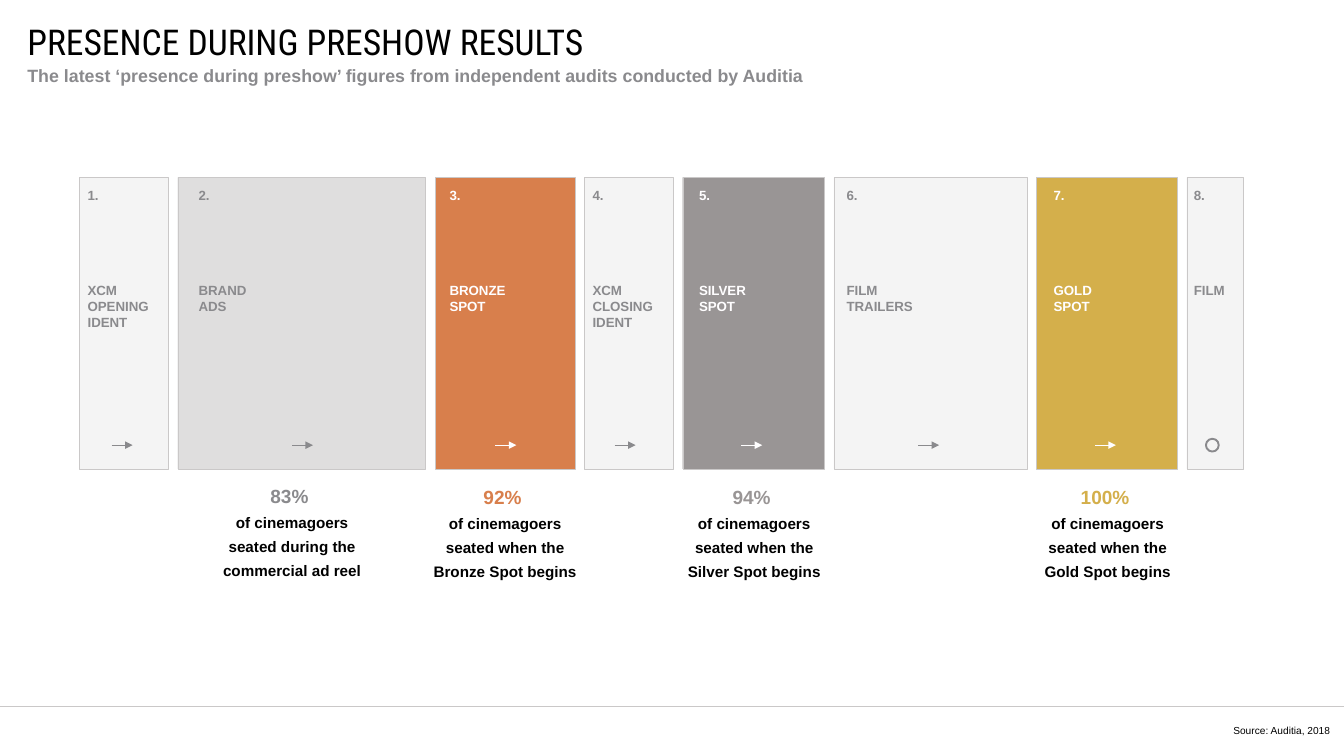
"""Build the preshow presence slide: eight timeline panels with audience figures."""
from dataclasses import dataclass

from lxml import etree
from pptx import Presentation
from pptx.dml.color import RGBColor
from pptx.enum.shapes import MSO_CONNECTOR, MSO_SHAPE
from pptx.enum.text import MSO_ANCHOR, PP_ALIGN
from pptx.oxml.ns import qn
from pptx.util import Inches, Pt

LEFT, CENTER, RIGHT = PP_ALIGN.LEFT, PP_ALIGN.CENTER, PP_ALIGN.RIGHT
TOP, MIDDLE = MSO_ANCHOR.TOP, MSO_ANCHOR.MIDDLE
RECT, OVAL = MSO_SHAPE.RECTANGLE, MSO_SHAPE.OVAL
STRAIGHT = MSO_CONNECTOR.STRAIGHT


@dataclass(frozen=True)
class Theme:
    black: str = "000000"
    white: str = "FFFEFF"
    grey: str = "8A8A8D"
    rule: str = "CAC8C8"
    pale: str = "F4F4F4"
    ads: str = "DFDEDE"
    bronze: str = "D87F4C"
    silver: str = "999595"
    gold: str = "D4AF4B"
    heading: str = "Roboto Condensed"
    body: str = "Arial"
    title_size: float = 28
    subtitle_size: float = 14
    figure_size: float = 15
    caption_size: float = 12
    label_size: float = 10.5
    source_size: float = 8


theme = Theme()
prs = Presentation()
prs.slide_width, prs.slide_height = Inches(14.7), Inches(8.27)
s = prs.slides.add_slide(prs.slide_layouts[6])


def add_text(box, lines, font=theme.body, align=LEFT, anchor=TOP, inset=0.0,
             wrap=True, spacing=None, gap=0):
    """Add a text box; each line is (text, size, colour, bold), gap follows the first."""
    sp = s.shapes.add_textbox(*map(Inches, box))
    tf = sp.text_frame
    tf.word_wrap, tf.vertical_anchor = wrap, anchor
    tf.margin_left = tf.margin_right = Inches(inset)
    tf.margin_top = tf.margin_bottom = Inches(inset / 2)
    for i, (text, size, color, bold) in enumerate(lines):
        p = tf.paragraphs[0] if i == 0 else tf.add_paragraph()
        p.alignment = align
        if spacing:
            p.line_spacing = Pt(spacing)
        if gap and i == 1:
            p.space_before = Pt(gap)
        r = p.add_run()
        r.text = text
        r.font.name, r.font.size, r.font.bold = font, Pt(size), bold
        r.font.color.rgb = RGBColor.from_string(color)


def add_line(x1, x2, y, color, width, arrow=False):
    """Add a horizontal line, with an arrowhead at its right end if asked."""
    line = s.shapes.add_connector(STRAIGHT, *map(Inches, (x1, y, x2, y)))
    line.line.color.rgb = RGBColor.from_string(color)
    line.line.width = Pt(width)
    if arrow:
        etree.SubElement(line.line._get_or_add_ln(), qn("a:tailEnd"), type="triangle")
    etree.SubElement(line._element.spPr, qn("a:effectLst"))


add_line(0, 14.7, 7.73, theme.rule, 0.5)
add_text((0.3, 0.3, 13.58, 0.31),
         [("PRESENCE DURING PRESHOW RESULTS", theme.title_size, theme.black, False)],
         font=theme.heading, anchor=MIDDLE, wrap=False)
add_text((0.3, 0.71, 13.17, 0.48),
         [("The latest ‘presence during preshow’ figures from independent audits "
           "conducted by Auditia", theme.subtitle_size, theme.grey, True)], spacing=16.8)
add_text((11.14, 7.93, 3.41, 0.13),
         [("Source: Auditia, 2018", theme.source_size, theme.black, False)],
         align=RIGHT, anchor=MIDDLE)

PANEL_LEFT, PANEL_RIGHT, PANEL_TOP, PANEL_HEIGHT = 0.87, 13.6, 1.94, 3.19
ARROW_Y, ARROW_LENGTH = 4.87, 0.23

# width, fill, text colour, label lines, label offset, arrow offset
panels = [
    (0.97, theme.pale, theme.grey, ["XCM", "OPENING IDENT"], -0.01, 0.35),
    (2.71, theme.ads, theme.grey, ["BRAND", "ADS"], 0.13, 1.25),
    (1.53, theme.bronze, theme.white, ["BRONZE", "SPOT"], 0.06, 0.66),
    (0.97, theme.pale, theme.grey, ["XCM", "CLOSING", "IDENT"], -0.01, 0.33),
    (1.55, theme.silver, theme.white, ["SILVER SPOT"], 0.08, 0.64),
    (2.11, theme.pale, theme.grey, ["FILM", "TRAILERS"], 0.04, 0.92),
    (1.54, theme.gold, theme.white, ["GOLD", "SPOT"], 0.09, 0.64),
    (0.62, theme.pale, theme.grey, ["FILM"], -0.02, None),
]
panel_gap = (PANEL_RIGHT - PANEL_LEFT - sum(panel[0] for panel in panels)) / (len(panels) - 1)

x = PANEL_LEFT
for number, (width, fill, color, label, label_dx, arrow_dx) in enumerate(panels, 1):
    sp = s.shapes.add_shape(RECT, *map(Inches, (x, PANEL_TOP, width, PANEL_HEIGHT)))
    sp.shadow.inherit = False
    sp.fill.solid()
    sp.fill.fore_color.rgb = RGBColor.from_string(fill)
    sp.line.color.rgb = RGBColor.from_string(theme.rule)
    sp.line.width = Pt(0.25)
    add_text((x + label_dx, 2, 1.34 if label[-1] == "TRAILERS" else 1.11, 1.9),
             [(text, theme.label_size, color, True) for text in [f"{number}.", *label]],
             inset=0.1, gap=62)
    if arrow_dx is not None:
        add_line(x + arrow_dx, x + arrow_dx + ARROW_LENGTH, ARROW_Y, color, 0.75, arrow=True)
    x += width + panel_gap

end_ring = s.shapes.add_shape(OVAL, *map(Inches, (13.19, 4.8, 0.14, 0.14)))
end_ring.shadow.inherit = False
end_ring.fill.background()
end_ring.line.color.rgb = RGBColor.from_string(theme.grey)
end_ring.line.width = Pt(1.5)

captions = [
    (2.21, 5.24, 1.97, "83% ", theme.grey, "during the commercial ad reel"),
    (4.63, 5.25, 1.79, "92% ", theme.bronze, "when the Bronze Spot begins"),
    (7.4, 5.25, 1.7, "94% ", theme.silver, "when the Silver Spot begins"),
    (11.24, 5.25, 1.75, "100% ", theme.gold, "when the Gold Spot begins"),
]
for left, top, width, figure, color, moment in captions:
    add_text((left, top, width, 0.85),
             [(figure, theme.figure_size, color, True),
              (f"of cinemagoers seated {moment}", theme.caption_size, theme.black, True)],
             align=CENTER, inset=0.1, spacing=19)

prs.save("out.pptx")
